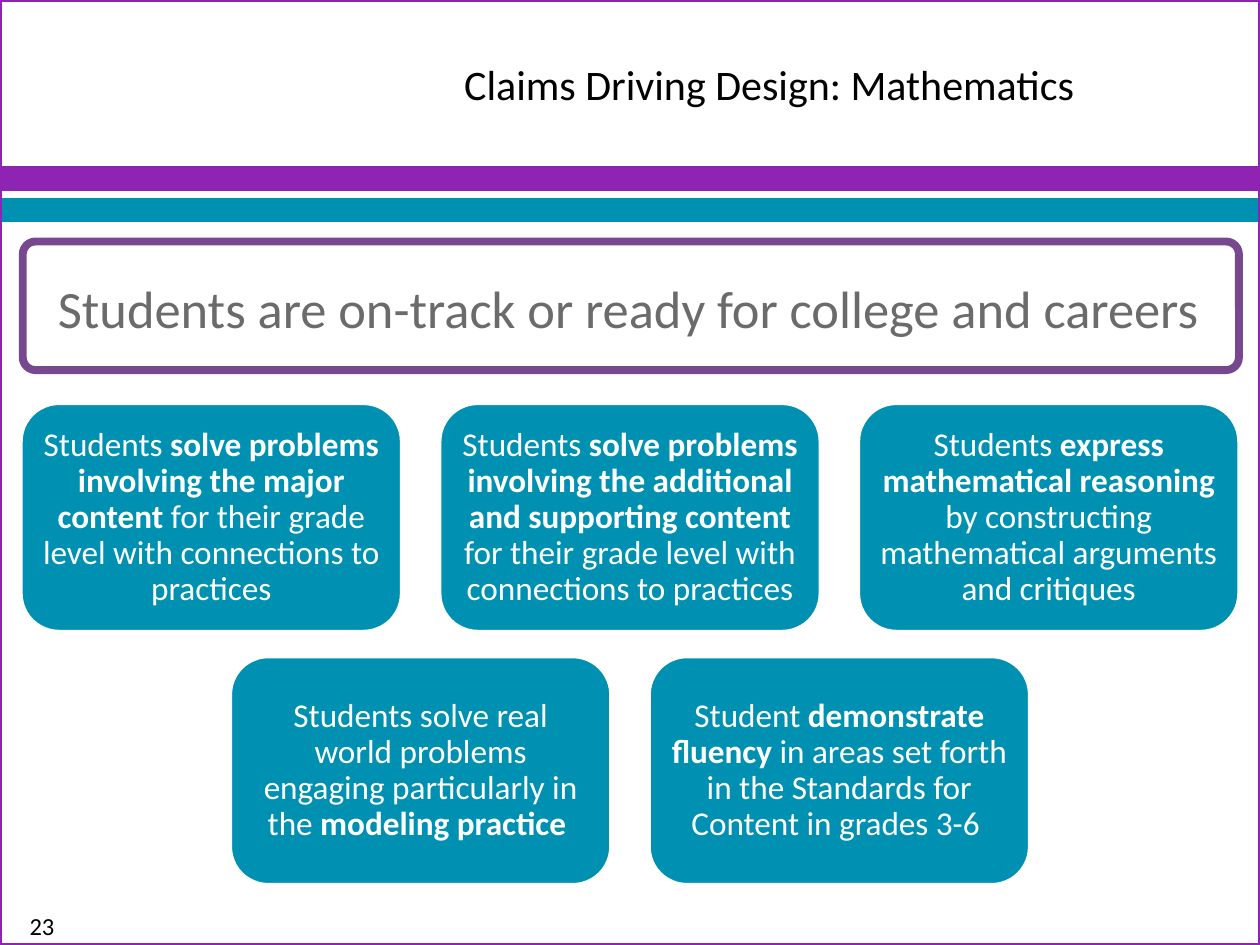
from pptx import Presentation
from pptx.dml.color import RGBColor
from pptx.enum.shapes import MSO_SHAPE
from pptx.enum.text import MSO_ANCHOR, MSO_AUTO_SIZE, PP_ALIGN
from pptx.util import Pt

RECT, ROUNDED = MSO_SHAPE.RECTANGLE, MSO_SHAPE.ROUNDED_RECTANGLE
TOP, MIDDLE = MSO_ANCHOR.TOP, MSO_ANCHOR.MIDDLE
LEFT, CENTER = PP_ALIGN.LEFT, PP_ALIGN.CENTER

# Content: text runs are (text, bold)
TITLE = "Claims Driving Design: Mathematics"
GOAL = "Students are on-track or ready for college and careers"
PAGE = "23"
CLAIM_ROWS = [
    [
        [("Students ", False),
         ("solve problems involving the major content ", True),
         ("for their grade level with connections to practices", False)],
        [("Students ", False),
         ("solve problems involving the additional and supporting content ", True),
         ("for their grade level with connections to practices", False)],
        [("Students ", False),
         ("express mathematical reasoning ", True),
         ("by constructing mathematical arguments and critiques", False)],
    ],
    [
        [("Students solve real world problems engaging particularly in the ", False),
         ("modeling practice ", True)],
        [("Student ", False),
         ("demonstrate fluency ", True),
         ("in areas set forth in the Standards for Content in grades 3-6 ", False)],
    ],
]

COLORS = {"purple": "8F23B3", "teal": "0091B2", "plum": "78488E",
          "white": "FFFFFF", "gray": "6B6B6B", "black": "000000"}
FONT = "Calibri"
SLIDE_W, SLIDE_H = 720, 540
BANDS = [("purple", 96), ("teal", 114)]
BAND_H = 12
CARD_W, CARD_H = 217.5, 130.4
CARD_GAP_X, CARD_GAP_Y, CARDS_TOP = 21.75, 14.3, 230.5


def rgb(name):
    return RGBColor.from_string(COLORS[name])


def add_box(kind, left, top, width, height, fill, line, line_width):
    box = slide.shapes.add_shape(kind, Pt(left), Pt(top), Pt(width), Pt(height))
    box.shadow.inherit = False
    if fill:
        box.fill.solid()
        box.fill.fore_color.rgb = rgb(fill)
    else:
        box.fill.background()
    box.line.color.rgb = rgb(line)
    box.line.width = Pt(line_width)
    return box


def write(box, runs, size, color, insets, align=CENTER, anchor=MIDDLE, spacing=1.0):
    frame = box.text_frame
    left, top, right, bottom = (Pt(inset) for inset in insets)
    frame_format = {"word_wrap": True, "auto_size": MSO_AUTO_SIZE.NONE,
                    "vertical_anchor": anchor, "margin_left": left,
                    "margin_top": top, "margin_right": right, "margin_bottom": bottom}
    for key, value in frame_format.items():
        setattr(frame, key, value)
    paragraph = frame.paragraphs[0]
    paragraph.alignment = align
    paragraph.line_spacing = spacing
    for text, bold in runs:
        run = paragraph.add_run()
        run.text = text
        for key, value in {"name": FONT, "size": Pt(size), "bold": bold}.items():
            setattr(run.font, key, value)
        run.font.color.rgb = rgb(color)
    return paragraph


prs = Presentation()
prs.slide_width, prs.slide_height = Pt(SLIDE_W), Pt(SLIDE_H)
slide = prs.slides.add_slide(prs.slide_layouts[5])

# Header bands and slide frame
for color, top in BANDS:
    add_box(RECT, 0, top, SLIDE_W, BAND_H, color, color, 2)
add_box(RECT, 0, 0, SLIDE_W, SLIDE_H, None, "purple", 2.25)

# Title
title = slide.shapes.title
title_place = {"left": 222, "top": 0, "width": 498, "height": 96}
for key, value in title_place.items():
    setattr(title, key, Pt(value))
heading = write(title, [(TITLE, False)], 24, "black", (7.2, 3.6, 7.2, 3.6), align=LEFT)
heading_props = heading._p.get_or_add_pPr()
heading_props.set("marL", str(Pt(36)))
heading_props.set("indent", "0")

# Claim cards, each row centred on the slide
for row, claims in enumerate(CLAIM_ROWS):
    row_w = len(claims) * (CARD_W + CARD_GAP_X) - CARD_GAP_X
    row_left = (SLIDE_W - row_w) / 2
    card_top = CARDS_TOP + row * (CARD_H + CARD_GAP_Y)
    for column, claim in enumerate(claims):
        card_left = row_left + column * (CARD_W + CARD_GAP_X)
        card = add_box(ROUNDED, card_left, card_top, CARD_W, CARD_H, "teal", "white", 2)
        write(card, claim, 19, "white", (5.7, 5.7, 5.7, 5.7), spacing=0.9)

# Overall goal
goal = add_box(ROUNDED, 13, 138, 695, 73.5, "white", "plum", 4.5)
goal.adjustments[0] = 0.1
write(goal, [(GOAL + " ", False)], 30, "gray", (10.8, 12, 6.5, 5.5), spacing=0.9)

# Page number
page = slide.shapes.add_textbox(Pt(0), Pt(517), Pt(48), Pt(23))
write(page, [(PAGE, False)], 14, "black", (7.2, 3.6, 7.2, 3.6), anchor=TOP)

prs.save("out.pptx")
